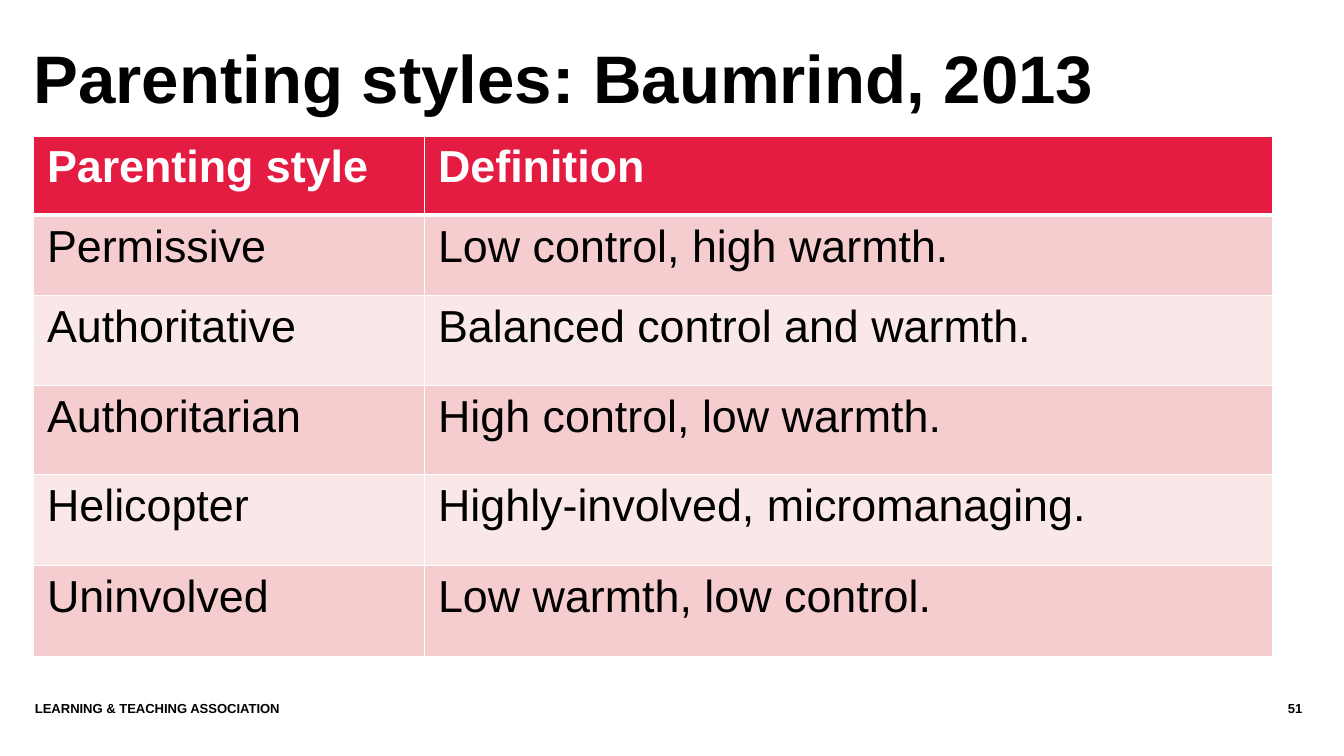
"""Build the parenting styles slide."""
from lxml import etree
from pptx import Presentation
from pptx import util as u
from pptx.dml import color
from pptx.enum import text
from pptx.oxml import ns

COLOURS = {"black": "000000", "white": "FFFFFF", "header": "E51C41",
           "band_dark": "F5CDCF", "band_light": "FAE8E9"}
FONT = "Arial"
COLUMN_WIDTHS = [2.91, 6.31]
ROW_HEIGHTS = [0.59, 0.6, 0.67, 0.66, 0.68, 0.68]
STYLES = [
    ("Parenting style", "Definition"),
    ("Permissive", "Low control, high warmth."),
    ("Authoritative", "Balanced control and warmth."),
    ("Authoritarian", "High control, low warmth."),
    ("Helicopter", "Highly-involved, micromanaging."),
    ("Uninvolved", "Low warmth, low control."),
]


def write(frame, words, size, colour="black", bold=False,
          align=text.PP_ALIGN.LEFT, spacing=1.0):
    """Put one formatted paragraph into a text frame."""
    para = frame.paragraphs[0]
    para.alignment = align
    para.line_spacing = spacing
    span = para.add_run()
    span.text = words
    span.font.name = FONT
    span.font.size = u.Pt(size)
    span.font.bold = bold
    span.font.color.rgb = color.RGBColor.from_string(COLOURS[colour])


def add_text(page, words, left, top, width, height,
             anchor=text.MSO_ANCHOR.TOP, bottom=0, **style):
    """Add a wrapped text box with no margin except an optional bottom one."""
    box = page.shapes.add_textbox(*map(u.Inches, (left, top, width, height)))
    frame = box.text_frame
    frame.word_wrap = True
    frame.vertical_anchor = anchor
    frame.margin_left = frame.margin_right = frame.margin_top = 0
    frame.margin_bottom = u.Inches(bottom)
    write(frame, words, **style)


def add_borders(cell, widths):
    """Draw white cell borders, given a width in points per side."""
    properties = cell._tc.get_or_add_tcPr()
    for side, width in widths.items():
        line = etree.SubElement(properties, ns.qn(f"a:ln{side}"), w=str(u.Pt(width)))
        fill = etree.SubElement(line, ns.qn("a:solidFill"))
        etree.SubElement(fill, ns.qn("a:srgbClr"), val=COLOURS["white"])


def fill_cell(cell, words, row):
    """Format a table cell according to its row."""
    header = row == 0
    add_borders(cell, {"L": 1, "R": 1, "T": 3 if row == 1 else 1,
                       "B": 3 if header else 1})
    band = "header" if header else "band_dark" if row % 2 else "band_light"
    cell.fill.solid()
    cell.fill.fore_color.rgb = color.RGBColor.from_string(COLOURS[band])
    write(cell.text_frame, words, 24, "white" if header else "black", bold=header)


def add_styles_table(page, left, top):
    """Add the table of parenting styles."""
    size = sum(COLUMN_WIDTHS), sum(ROW_HEIGHTS)
    table = page.shapes.add_table(len(ROW_HEIGHTS), len(COLUMN_WIDTHS),
                                  *map(u.Inches, (left, top, *size))).table
    for column, width in zip(table.columns, COLUMN_WIDTHS):
        column.width = u.Inches(width)
    for row, height in enumerate(ROW_HEIGHTS):
        table.rows[row].height = u.Inches(height)
        for column, words in enumerate(STYLES[row]):
            fill_cell(table.cell(row, column), words, row)


def main():
    """Create the deck and save it."""
    deck = Presentation()
    deck.slide_width = u.Inches(10)
    deck.slide_height = deck.slide_width * 9 // 16
    page = deck.slides.add_slide(deck.slide_layouts[6])
    add_text(page, "Parenting styles: Baumrind, 2013", 0.25, 0.27, 9.23, 0.76,
             anchor=text.MSO_ANCHOR.MIDDLE, bottom=0.07, size=36, bold=True,
             spacing=0.85)
    add_text(page, "LEARNING & TEACHING ASSOCIATION", 0.26, 5.21, 8.41, 0.3,
             size=7, bold=True)
    add_text(page, "51", 8.7, 5.21, 0.99, 0.3, size=7, bold=True,
             align=text.PP_ALIGN.RIGHT)
    add_styles_table(page, 0.25, 1.01)
    deck.save("out.pptx")


if __name__ == "__main__":
    main()
